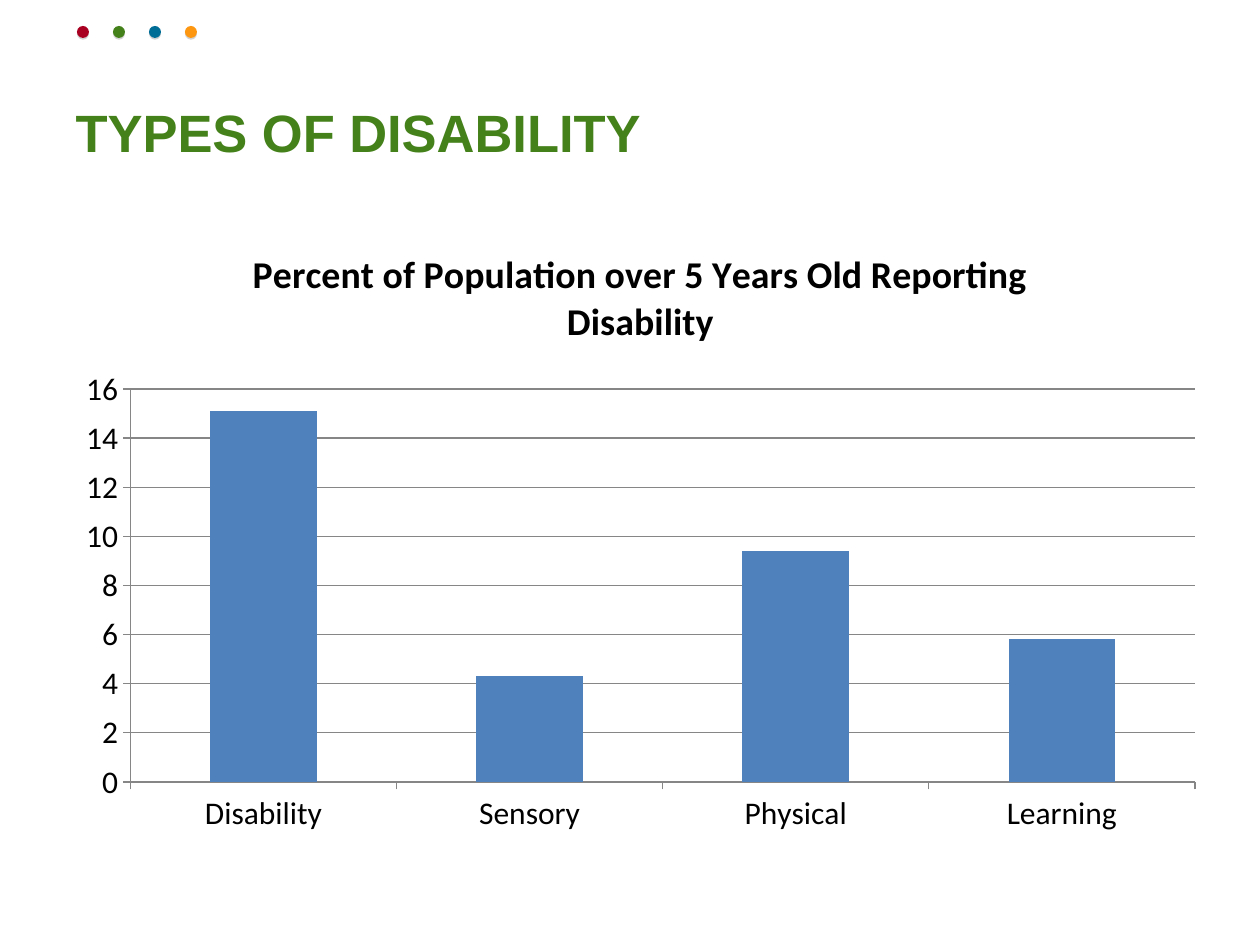
from dataclasses import dataclass

from lxml.etree import SubElement
from pptx import Presentation
from pptx.chart.axis import _BaseAxis
from pptx.chart.data import CategoryChartData
from pptx.dml.color import RGBColor
from pptx.enum.chart import XL_CHART_TYPE, XL_TICK_MARK
from pptx.enum.shapes import MSO_SHAPE
from pptx.enum.text import MSO_ANCHOR, PP_ALIGN
from pptx.oxml.ns import qn
from pptx.slide import Slide
from pptx.util import Emu, Pt

PX = 914400 // 126


@dataclass(frozen=True)
class Theme:
    red: str = "A90021"
    green: str = "45811B"
    blue: str = "006D97"
    orange: str = "FD9712"
    bar: str = "4F81BD"
    axis_line: str = "868686"
    shadow: str = "808080"
    text: str = "000000"
    heading_font: str = "Arial"
    chart_font: str = "Calibri"
    heading_size: float = 30
    chart_title_size: float = 21.6
    axis_size: float = 18


@dataclass(frozen=True)
class Box:
    left: int
    top: int
    width: int
    height: int

    def emu(self) -> tuple[Emu, ...]:
        return tuple(Emu(v * PX) for v in (self.left, self.top, self.width, self.height))


THEME = Theme()
DOT_COLORS = (THEME.red, THEME.green, THEME.blue, THEME.orange)
DOT_PITCH = 36
HEADING_BOX = Box(63, 53, 1155, 158)
CHART_BOX = Box(63, 221, 1155, 624)
MEASURE = "Percent of Population over 5 Years Old Reporting Disability"
PERCENTAGES = {"Disability": 15.1, "Sensory": 4.3, "Physical": 9.4, "Learning": 5.8}


def rgb(color: str) -> RGBColor:
    return RGBColor.from_string(color)


def add_dot(slide: Slide, box: Box, color: str) -> None:
    dot = slide.shapes.add_shape(MSO_SHAPE.OVAL, *box.emu())
    dot.fill.solid()
    dot.fill.fore_color.rgb = rgb(color)
    dot.line.fill.background()
    dot.shadow.inherit = False
    effects = dot.element.spPr.find(qn("a:effectLst"))
    shadow = SubElement(effects, qn("a:outerShdw"), dist=str(Pt(1)), dir="5400000", rotWithShape="0")
    tint = SubElement(shadow, qn("a:srgbClr"), val=THEME.shadow)
    SubElement(tint, qn("a:alpha"), val="35000")


def set_heading(slide: Slide, wording: str) -> None:
    heading = slide.shapes.title
    heading.left, heading.top, heading.width, heading.height = HEADING_BOX.emu()
    frame = heading.text_frame
    frame.text = wording
    frame.vertical_anchor = MSO_ANCHOR.MIDDLE
    paragraph = frame.paragraphs[0]
    paragraph.alignment = PP_ALIGN.LEFT
    font = paragraph.font
    font.name, font.size, font.bold = THEME.heading_font, Pt(THEME.heading_size), True
    font.color.rgb = rgb(THEME.green)


def style_axis(axis: _BaseAxis) -> None:
    axis.major_tick_mark = XL_TICK_MARK.OUTSIDE
    axis.minor_tick_mark = XL_TICK_MARK.NONE
    axis.format.line.color.rgb = rgb(THEME.axis_line)
    axis.format.line.width = Pt(0.75)


def add_disability_chart(slide: Slide) -> None:
    data = CategoryChartData()
    data.categories = PERCENTAGES.keys()
    data.add_series(MEASURE, PERCENTAGES.values())
    chart = slide.shapes.add_chart(XL_CHART_TYPE.COLUMN_CLUSTERED, *CHART_BOX.emu(), data).chart
    chart.has_legend = False
    chart.font.name, chart.font.size = THEME.chart_font, Pt(THEME.axis_size)
    chart.font.color.rgb = rgb(THEME.text)

    chart.has_title = True
    chart.chart_title.include_in_layout = False
    chart.chart_title.text_frame.text = MEASURE
    font = chart.chart_title.text_frame.paragraphs[0].font
    font.name, font.size, font.bold = THEME.chart_font, Pt(THEME.chart_title_size), True
    font.color.rgb = rgb(THEME.text)

    for axis in (chart.category_axis, chart.value_axis):
        style_axis(axis)
    values = chart.value_axis
    values.minimum_scale, values.maximum_scale, values.major_unit = 0, 16, 2
    values.has_major_gridlines = True
    values.major_gridlines.format.line.color.rgb = rgb(THEME.axis_line)
    values.major_gridlines.format.line.width = Pt(0.75)

    plot = chart.plots[0]
    plot.gap_width = 150
    plot.vary_by_categories = False
    bars = plot.series[0].format.fill
    bars.solid()
    bars.fore_color.rgb = rgb(THEME.bar)


def main() -> None:
    presentation = Presentation()
    presentation.slide_width, presentation.slide_height = Emu(1260 * PX), Emu(945 * PX)
    slide = presentation.slides.add_slide(presentation.slide_layouts[5])
    for index, color in enumerate(DOT_COLORS):
        add_dot(slide, Box(77 + index * DOT_PITCH, 26, 12, 12), color)
    set_heading(slide, "TYPES OF DISABILITY")
    add_disability_chart(slide)
    presentation.save("out.pptx")


if __name__ == "__main__":
    main()
